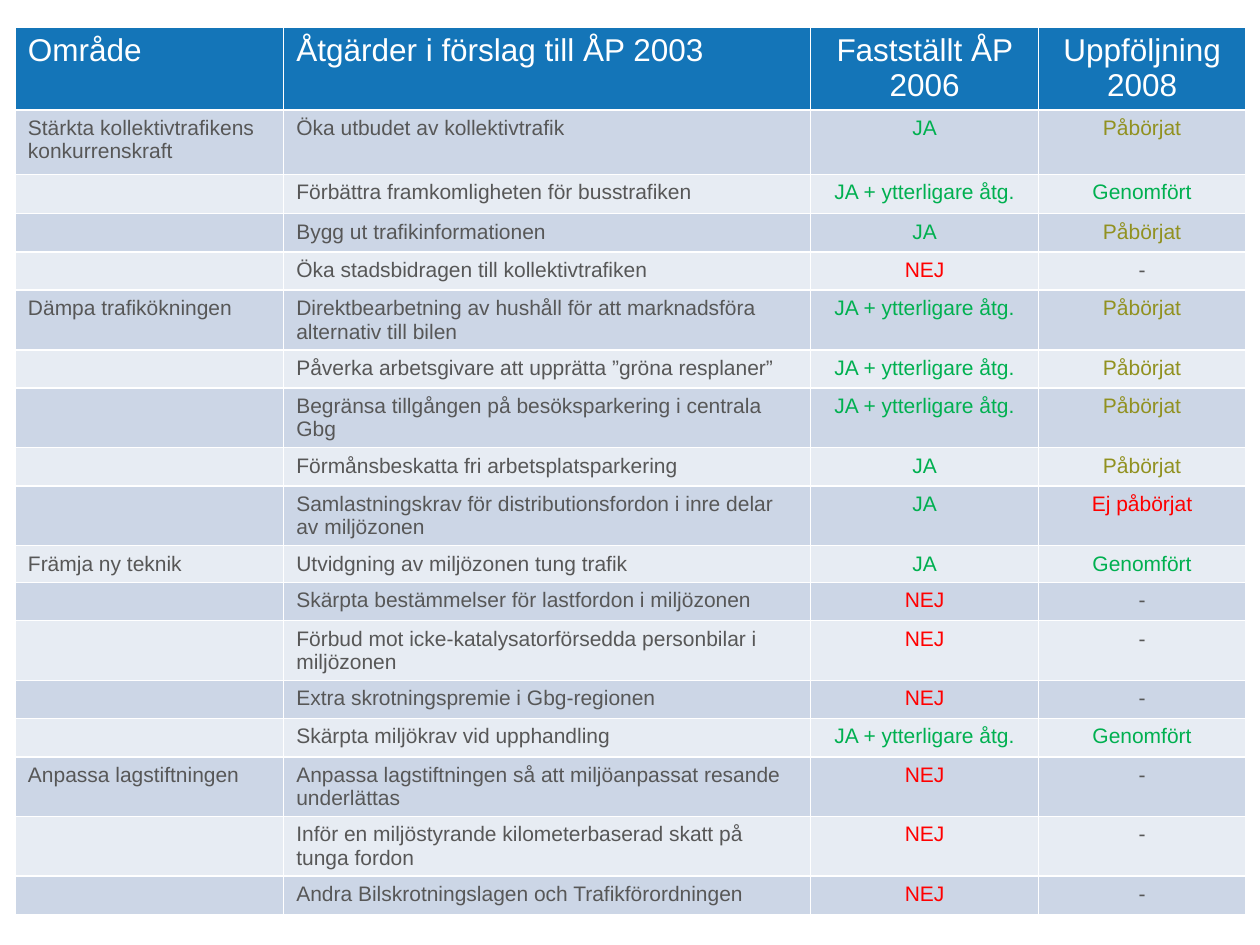
from pptx import Presentation
from pptx.dml.color import RGBColor as RGB
from pptx.enum.text import PP_ALIGN as ALIGN
from pptx.util import Cm, Pt

WHITE = RGB(0xFF, 0xFF, 0xFF)
BLUE = RGB(0x14, 0x75, 0xB8)
BAND_DARK = RGB(0xCC, 0xD6, 0xE6)
BAND_LIGHT = RGB(0xE7, 0xEC, 0xF3)
GREY = RGB(0x57, 0x57, 0x57)
GREEN = RGB(0x00, 0xB0, 0x50)
OLIVE = RGB(0x91, 0x91, 0x20)
RED = RGB(0xFF, 0x00, 0x00)

YES, YES_MORE, NO = "JA", "JA + ytterligare åtg.", "NEJ"
STARTED, DONE, NOT_STARTED, NONE = "Påbörjat", "Genomfört", "Ej påbörjat", "-"
STATUS_COLORS = {YES: GREEN, YES_MORE: GREEN, NO: RED, STARTED: OLIVE,
                 DONE: GREEN, NOT_STARTED: RED}

HEADER = ["Område", "Åtgärder i förslag till ÅP 2003",
          "Fastställt ÅP 2006", "Uppföljning 2008"]
AREAS = {
    "Stärkta kollektivtrafikens konkurrenskraft": [
        ("Öka utbudet av kollektivtrafik", YES, STARTED),
        ("Förbättra framkomligheten för busstrafiken", YES_MORE, DONE),
        ("Bygg ut trafikinformationen", YES, STARTED),
        ("Öka stadsbidragen till kollektivtrafiken", NO, NONE),
    ],
    "Dämpa trafikökningen": [
        ("Direktbearbetning av hushåll för att marknadsföra alternativ till bilen",
         YES_MORE, STARTED),
        ("Påverka arbetsgivare att upprätta ”gröna resplaner”", YES_MORE, STARTED),
        ("Begränsa tillgången på besöksparkering i centrala Gbg", YES_MORE, STARTED),
        ("Förmånsbeskatta fri arbetsplatsparkering", YES, STARTED),
        ("Samlastningskrav för distributionsfordon i inre delar av miljözonen",
         YES, NOT_STARTED),
    ],
    "Främja ny teknik": [
        ("Utvidgning av miljözonen tung trafik", YES, DONE),
        ("Skärpta bestämmelser för lastfordon i miljözonen", NO, NONE),
        ("Förbud mot icke-katalysatorförsedda personbilar i miljözonen", NO, NONE),
        ("Extra skrotningspremie i Gbg-regionen", NO, NONE),
        ("Skärpta miljökrav vid upphandling", YES_MORE, DONE),
    ],
    "Anpassa lagstiftningen": [
        ("Anpassa lagstiftningen så att miljöanpassat resande underlättas", NO, NONE),
        ("Inför en miljöstyrande kilometerbaserad skatt på tunga fordon", NO, NONE),
        ("Andra Bilskrotningslagen och Trafikförordningen", NO, NONE),
    ],
}
COL_WIDTHS = [5.41, 10.62, 4.6, 4.17]
FIRST_HEIGHTS = [1.4, 1.3, 0.79]
ROW_HEIGHT = 0.74


def write(tf, text, size=12, color=GREY, align=ALIGN.LEFT, font="Arial"):
    p = tf.paragraphs[0]
    p.alignment = align
    if not text:
        # An empty cell keeps its row low only through the end mark's size.
        p._p.get_or_add_endParaRPr().set("sz", str(size * 100))
        return
    r = p.add_run()
    r.text = text
    r.font.name = font
    r.font.size = Pt(size)
    r.font.bold = False
    r.font.color.rgb = color


class SlideBuilder:
    def __init__(self, prs):
        self.slide = prs.slides.add_slide(prs.slide_layouts[6])
        self.header_size, self.body_size = 18, 12

    def table(self, left, top, widths, heights, rows):
        """Draw rows below a header row; status columns are centred and coloured."""
        table = self.slide.shapes.add_table(
            len(rows), len(widths), Cm(left), Cm(top),
            Cm(sum(widths)), Cm(sum(heights))).table
        for col, width in zip(table.columns, widths):
            col.width = Cm(width)
        for i, (values, height) in enumerate(zip(rows, heights)):
            table.rows[i].height = Cm(height)
            for j, text in enumerate(values):
                self.cell(table.cell(i, j), text, i, j)

    def cell(self, cell, text, row, col):
        if row == 0:
            fill, color, size = BLUE, WHITE, self.header_size
        else:
            fill = BAND_DARK if row % 2 else BAND_LIGHT
            color, size = STATUS_COLORS.get(text, GREY), self.body_size
        cell.fill.solid()
        cell.fill.fore_color.rgb = fill
        write(cell.text_frame, text, size=size, color=color,
              align=ALIGN.CENTER if col >= 2 else ALIGN.LEFT)


def main():
    prs = Presentation()
    prs.slide_width, prs.slide_height = Cm(25.4), Cm(19.05)
    rows = [HEADER]
    for area, measures in AREAS.items():
        for i, measure in enumerate(measures):
            rows.append(["" if i else area, *measure])
    heights = FIRST_HEIGHTS + [ROW_HEIGHT] * (len(rows) - len(FIRST_HEIGHTS))
    SlideBuilder(prs).table(0.31, 0.54, COL_WIDTHS, heights, rows)
    prs.save("out.pptx")


if __name__ == "__main__":
    main()
